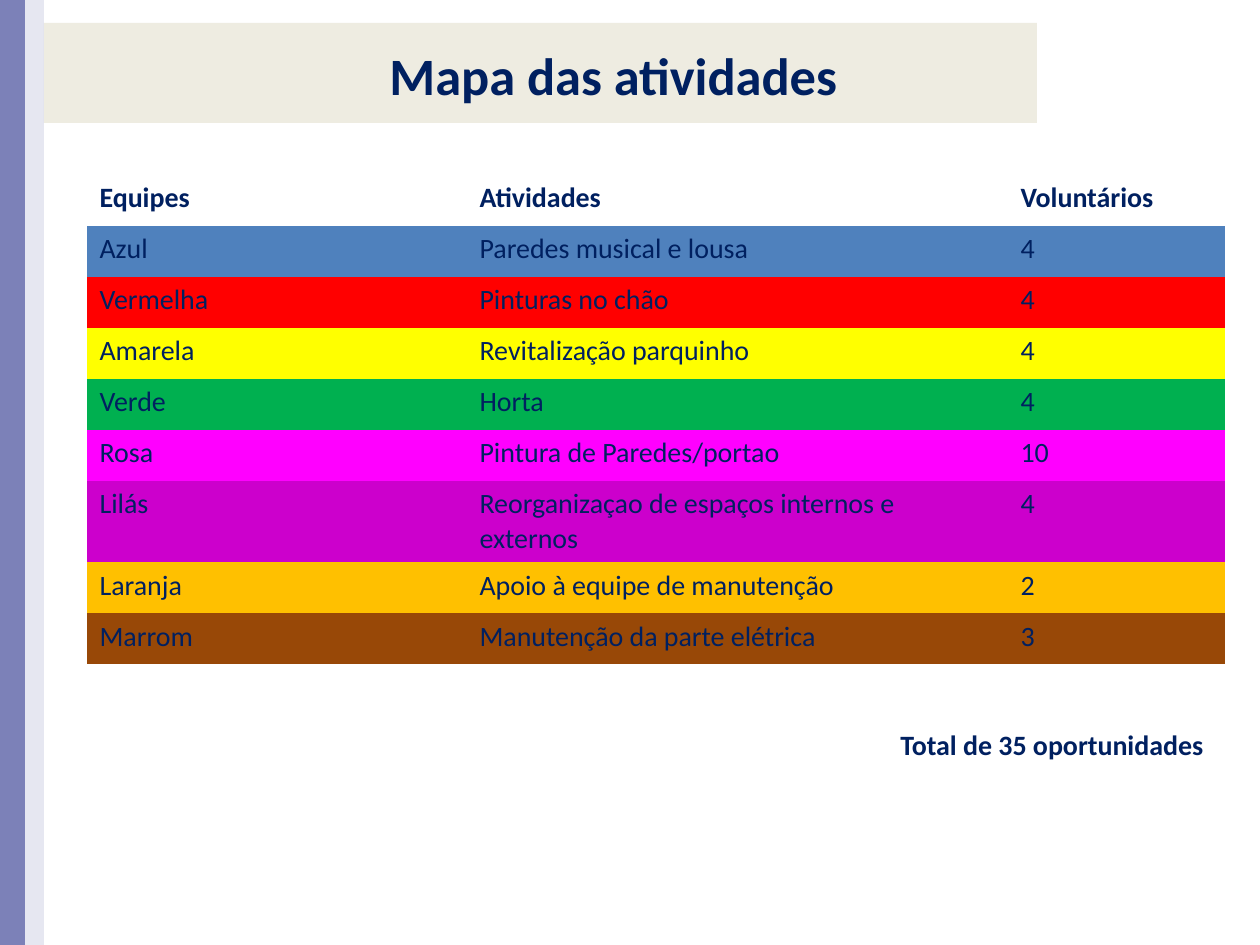
import pptx
import pptx.util
from pptx.dml.color import RGBColor
from pptx.enum.shapes import MSO_SHAPE
from pptx.enum.text import MSO_ANCHOR, MSO_AUTO_SIZE, PP_ALIGN
from pptx.oxml.ns import qn
from lxml import etree

PX = 914400 / 126
NAVY = RGBColor(0x00, 0x20, 0x60)
BEIGE = RGBColor(0xEE, 0xEC, 0xE1)
PERIWINKLE = RGBColor(0x7C, 0x81, 0xB8)
INDIGO = RGBColor(0x0C, 0x15, 0x7E)
BLUE = RGBColor(0x4F, 0x81, 0xBD)
RED = RGBColor(0xFF, 0x00, 0x00)
YELLOW = RGBColor(0xFF, 0xFF, 0x00)
GREEN = RGBColor(0x00, 0xB0, 0x50)
PINK = RGBColor(0xFF, 0x00, 0xFF)
LILAC = RGBColor(0xCC, 0x00, 0xCC)
ORANGE = RGBColor(0xFF, 0xC0, 0x00)
BROWN = RGBColor(0x98, 0x48, 0x07)
NO_STYLE_NO_GRID = "{2D5ABB26-0587-4C30-8999-92F81FD0307C}"


def px(*lengths):
    return [pptx.util.Emu(round(length * PX)) for length in lengths]


def write(frame, text, size=16, bold=False, align=PP_ALIGN.LEFT):
    paragraph = frame.paragraphs[0]
    paragraph.alignment = align
    run = paragraph.add_run()
    run.text = text
    run.font.name = "Calibri"
    run.font.size = pptx.util.Pt(size)
    run.font.bold = bold
    run.font.color.rgb = NAVY


deck = pptx.Presentation()
deck.slide_width, deck.slide_height = px(1260, 945)
slide = deck.slides.add_slide(deck.slide_layouts[5])

for box, color, opacity in [
    ((44, 23, 993, 100), BEIGE, 100),
    ((0, 0, 25, 945), PERIWINKLE, 100),
    ((25, 0, 19, 945), INDIGO, 10),
]:
    band = slide.shapes.add_shape(MSO_SHAPE.RECTANGLE, *px(*box))
    band.shadow.inherit = False
    band.line.fill.background()
    band.fill.solid()
    band.fill.fore_color.rgb = color
    if opacity < 100:
        tint = band.element.spPr.find(qn("a:solidFill"))[0]
        etree.SubElement(tint, qn("a:alpha"), val=str(opacity * 1000))

heading = slide.shapes.title
heading.left, heading.top, heading.width, heading.height = px(44, 27, 1139, 96)
heading.text_frame.vertical_anchor = MSO_ANCHOR.MIDDLE
write(heading.text_frame, "Mapa das atividades", size=30, bold=True, align=PP_ALIGN.CENTER)
heading.element.getparent().append(heading.element)

teams = [
    ("Equipes", "Atividades", "Voluntários", None),
    ("Azul", "Paredes musical e lousa", "4", BLUE),
    ("Vermelha", "Pinturas no chão", "4", RED),
    ("Amarela", "Revitalização parquinho", "4", YELLOW),
    ("Verde", "Horta", "4", GREEN),
    ("Rosa", "Pintura de Paredes/portao", "10", PINK),
    ("Lilás", "Reorganizaçao de espaços internos e externos", "4", LILAC),
    ("Laranja", "Apoio à equipe de manutenção", "2", ORANGE),
    ("Marrom", "Manutenção da parte elétrica", "3", BROWN),
]
activity_frame = slide.shapes.add_table(len(teams), 3, *px(87, 175, 1138, 51 * len(teams)))
activities = activity_frame.table
activities.first_row = False
activities.horz_banding = False
next(activity_frame.element.iter(qn("a:tableStyleId"))).text = NO_STYLE_NO_GRID
for column, width in zip(activities.columns, px(380, 541, 217)):
    column.width = width
for row, (*entries, color) in enumerate(teams):
    for column, entry in enumerate(entries):
        cell = activities.cell(row, column)
        if color is None:
            cell.fill.background()
        else:
            cell.fill.solid()
            cell.fill.fore_color.rgb = color
        write(cell.text_frame, entry, bold=row == 0)

total = slide.shapes.add_textbox(*px(888, 721, 333, 47))
total.text_frame.word_wrap = False
total.text_frame.auto_size = MSO_AUTO_SIZE.SHAPE_TO_FIT_TEXT
write(total.text_frame, "Total de 35 oportunidades", bold=True)

deck.save("out.pptx")
